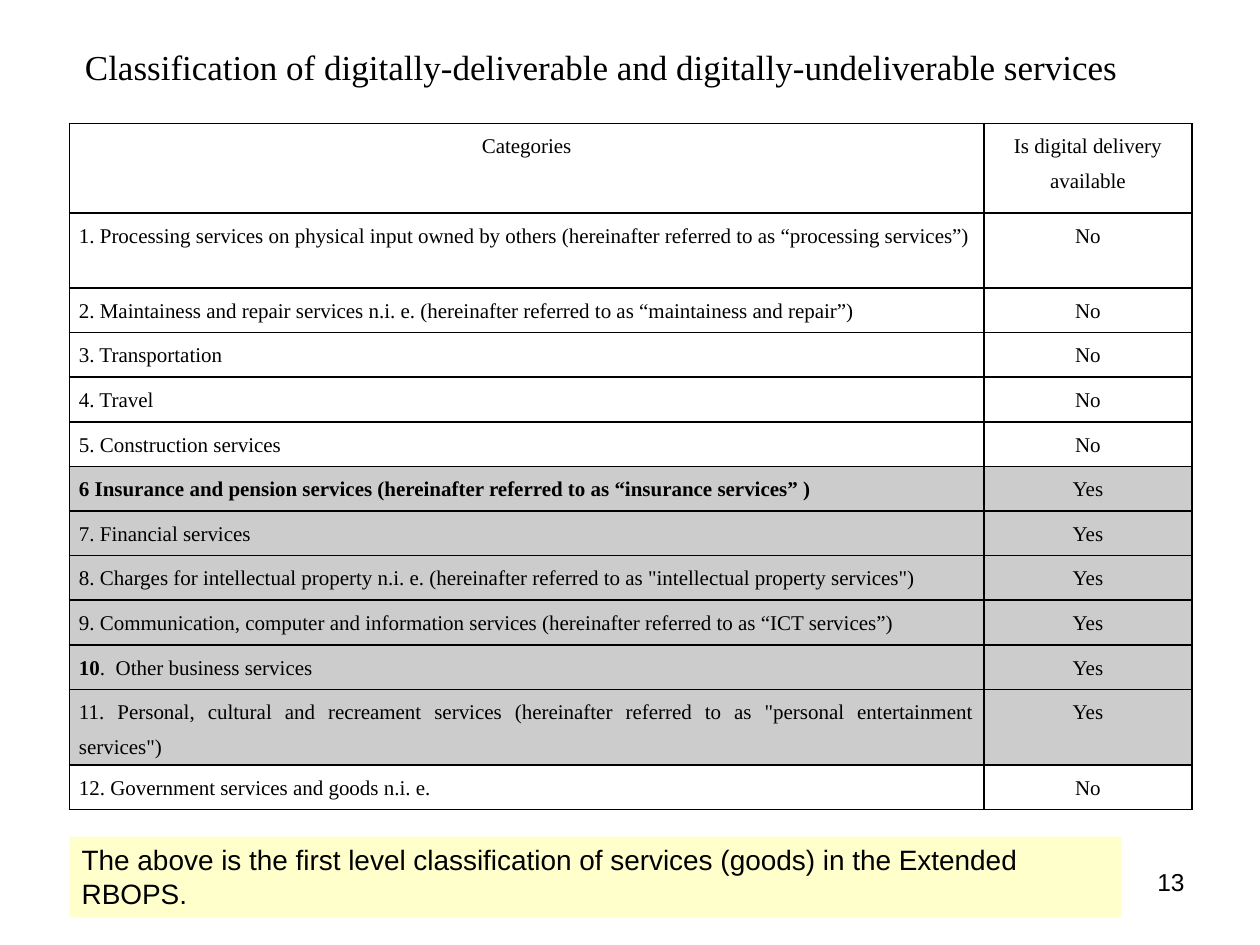
from lxml import etree
from pptx import Presentation
from pptx.dml.color import RGBColor
from pptx.enum import shapes, text
from pptx.oxml import ns
from pptx.util import Pt

# Content
TITLE = "Classification of digitally-deliverable and digitally-undeliverable services"
NOTE = ("The above is the first level classification of services (goods) "
        "in the Extended RBOPS.")
PAGE_NUMBER = "13"
HEADER = ("Categories", "Is digital delivery available")
SERVICES = [  # bold part, regular part, answer
    ("", "1. Processing services on physical input owned by others "
         "(hereinafter referred to as “processing services”)", "No"),
    ("", "2. Maintainess and repair services n.i. e. "
         "(hereinafter referred to as “maintainess and repair”)", "No"),
    ("", "3. Transportation", "No"),
    ("", "4. Travel", "No"),
    ("", "5. Construction services", "No"),
    ("6 Insurance and pension services "
     "(hereinafter referred to as “insurance services” )", "", "Yes"),
    ("", "7. Financial services", "Yes"),
    ("", "8. Charges for intellectual property n.i. e. "
         '(hereinafter referred to as "intellectual property services")', "Yes"),
    ("", "9. Communication, computer and information services "
         "(hereinafter referred to as “ICT services”)", "Yes"),
    ("10", ".  Other business services", "Yes"),
    ("", "11. Personal, cultural and recreament services "
         '(hereinafter referred to as "personal entertainment services")', "Yes"),
    ("", "12. Government services and goods n.i. e.", "No"),
]

# Style and layout, in points
COLORS = {"text": "000000", "border": "000000", "yes": "CCCCCC", "note": "FFFFCC"}
SERIF, SANS = "Times New Roman", "Arial"
LEFT, TABLE_TOP = 39.6, 70.6
COLUMN_WIDTHS = (522.7, 118.8)
HEADER_HEIGHT, ROW_HEIGHT, TALL_HEIGHT = 51, 25.5, 43
TALL_ROWS = (1, 11)
ALIGN = text.PP_ALIGN


def color(name):
    return RGBColor.from_string(COLORS[name])


def style(paragraph, font, size, align):
    paragraph.alignment = align
    paragraph.font.name = font
    paragraph.font.size = Pt(size)
    paragraph.font.color.rgb = color("text")


def write_line(shape, words, font, size, align, anchor=text.MSO_ANCHOR.TOP):
    frame = shape.text_frame
    frame.word_wrap = True
    frame.vertical_anchor = anchor
    frame.text = words
    style(frame.paragraphs[0], font, size, align)


def draw_borders(cell):
    properties = cell._tc.get_or_add_tcPr()
    for side in ("a:lnL", "a:lnR", "a:lnT", "a:lnB"):
        line = etree.SubElement(properties, ns.qn(side), w=str(Pt(1)))
        fill = etree.SubElement(line, ns.qn("a:solidFill"))
        etree.SubElement(fill, ns.qn("a:srgbClr"), val=COLORS["border"])


def fill_cell(cell, bold, regular, align, shaded):
    cell.margin_left = cell.margin_right = Pt(5.5)
    cell.margin_top = cell.margin_bottom = 0
    draw_borders(cell)
    if shaded:
        cell.fill.solid()
        cell.fill.fore_color.rgb = color("yes")
    else:
        cell.fill.background()
    paragraph = cell.text_frame.paragraphs[0]
    style(paragraph, SERIF, 12, align)
    paragraph.line_spacing = 1.5
    for words, is_bold in ((bold, True), (regular, False)):
        if words:
            run = paragraph.add_run()
            run.text = words
            run.font.bold = is_bold


presentation = Presentation()
presentation.slide_width, presentation.slide_height = Pt(720), Pt(540)
slide = presentation.slides.add_slide(presentation.slide_layouts[6])

# Page number
number = slide.shapes.add_textbox(Pt(516), Pt(492), Pt(168), Pt(37.5))
write_line(number, PAGE_NUMBER, SANS, 14, ALIGN.RIGHT)

# Classification table
heights = [HEADER_HEIGHT] + [
    TALL_HEIGHT if index in TALL_ROWS else ROW_HEIGHT
    for index in range(1, len(SERVICES) + 1)]
table = slide.shapes.add_table(
    len(heights), len(COLUMN_WIDTHS), Pt(LEFT), Pt(TABLE_TOP),
    Pt(sum(COLUMN_WIDTHS)), Pt(sum(heights))).table
table.first_row = table.horz_banding = False
for column, width in zip(table.columns, COLUMN_WIDTHS):
    column.width = Pt(width)
for row, height in zip(table.rows, heights):
    row.height = Pt(height)
for index, words in enumerate(HEADER):
    fill_cell(table.cell(0, index), "", words, ALIGN.CENTER, False)
for index, (bold, regular, answer) in enumerate(SERVICES, 1):
    shaded = answer == "Yes"
    fill_cell(table.cell(index, 0), bold, regular, ALIGN.JUSTIFY, shaded)
    fill_cell(table.cell(index, 1), "", answer, ALIGN.CENTER, shaded)

# Title
title = slide.shapes.add_textbox(Pt(23), Pt(22.3), Pt(641.5), Pt(31.7))
write_line(title, TITLE, SERIF, 20, ALIGN.CENTER, text.MSO_ANCHOR.MIDDLE)

# Note below the table
note = slide.shapes.add_shape(
    shapes.MSO_SHAPE.RECTANGLE, Pt(LEFT), Pt(478), Pt(601), Pt(46))
note.shadow.inherit = False
note.fill.solid()
note.fill.fore_color.rgb = color("note")
note.line.fill.background()
write_line(note, NOTE, SANS, 16, ALIGN.LEFT)

presentation.save("out.pptx")
